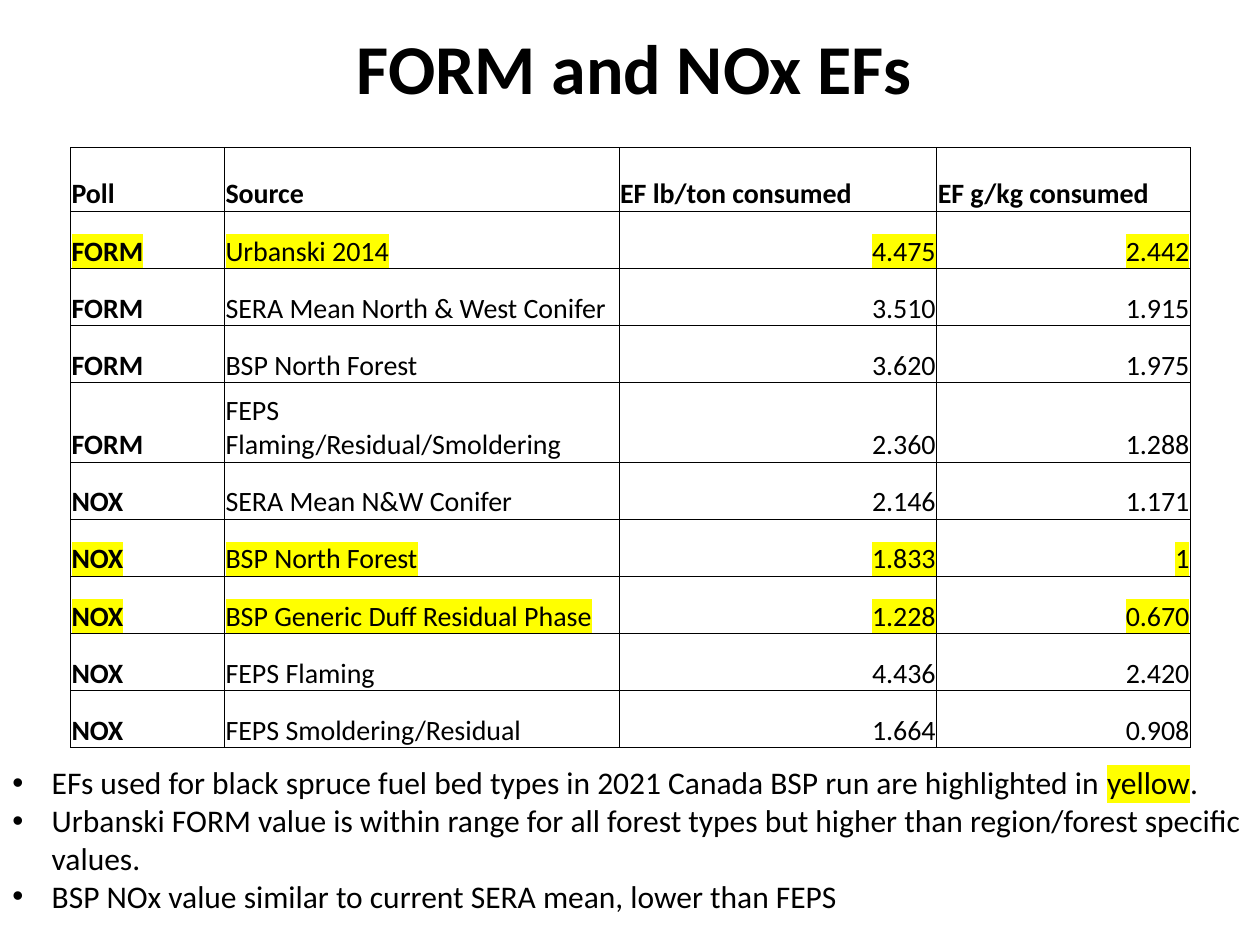
from dataclasses import dataclass

import pptx
import pptx.dml.color
import pptx.enum.text
import pptx.oxml
import pptx.oxml.ns
import pptx.util

Pt = pptx.util.Pt
Align = pptx.enum.text.PP_ALIGN
Anchor = pptx.enum.text.MSO_ANCHOR


@dataclass(frozen=True)
class Theme:
    font: str = "Calibri"
    ink: str = "000000"
    highlight: str = "FFFF00"
    title_size: float = 40
    table_size: float = 16
    note_size: float = 18
    border_width: float = 0.5


@dataclass(frozen=True)
class Factor:
    pollutant: str
    source: str
    lb_per_ton: str
    g_per_kg: str
    used: bool = False
    height: float = 32.6


@dataclass(frozen=True)
class Piece:
    text: str
    marked: bool = False


THEME = Theme()
HEADINGS = ("Poll", "Source", "EF lb/ton consumed", "EF g/kg consumed")
HEADING_HEIGHT = 36.5
COLUMN_WIDTHS = (88, 225.5, 181.5, 145)
FACTORS = (
    Factor("FORM", "Urbanski 2014", "4.475", "2.442", used=True),
    Factor("FORM", "SERA Mean North & West Conifer", "3.510", "1.915"),
    Factor("FORM", "BSP North Forest", "3.620", "1.975"),
    Factor("FORM", "FEPS Flaming/Residual/Smoldering", "2.360", "1.288", height=45.6),
    Factor("NOX", "SERA Mean N&W Conifer", "2.146", "1.171"),
    Factor("NOX", "BSP North Forest", "1.833", "1", used=True),
    Factor("NOX", "BSP Generic Duff Residual Phase", "1.228", "0.670", used=True),
    Factor("NOX", "FEPS Flaming", "4.436", "2.420"),
    Factor("NOX", "FEPS Smoldering/Residual", "1.664", "0.908"),
)
NOTES = (
    (
        Piece("EFs used for black spruce fuel bed types in 2021 Canada BSP run are highlighted in "),
        Piece("yellow", marked=True),
        Piece("."),
    ),
    (
        Piece(
            "Urbanski FORM value is within range for all forest types "
            "but higher than region/forest specific values."
        ),
    ),
    (Piece("BSP NOx value similar to current SERA mean, lower than FEPS"),),
)


def add_xml(parent, tag: str, body: str = "", **attributes: str) -> None:
    settings = " ".join(f'{key}="{value}"' for key, value in attributes.items())
    namespace = pptx.oxml.ns.nsdecls("a")
    parent.append(pptx.oxml.parse_xml(f"<a:{tag} {namespace} {settings}>{body}</a:{tag}>"))


def color_xml(color: str) -> str:
    return f'<a:srgbClr val="{color}"/>'


def set_font(paragraph, size: float, bold: bool = False) -> None:
    font = paragraph.font
    font.name = THEME.font
    font.size = Pt(size)
    font.bold = bold
    font.color.rgb = pptx.dml.color.RGBColor.from_string(THEME.ink)


def add_piece(paragraph, piece: Piece) -> None:
    run = paragraph.add_run()
    run.text = piece.text
    if piece.marked:
        add_xml(run.font._element, "highlight", color_xml(THEME.highlight))


def add_title(slide) -> None:
    title = slide.shapes.title
    title.left, title.top, title.width, title.height = Pt(196.5), Pt(-11), Pt(342), Pt(104.5)
    frame = title.text_frame
    frame.auto_size = pptx.enum.text.MSO_AUTO_SIZE.NONE
    frame.vertical_anchor = Anchor.MIDDLE
    heading = frame.paragraphs[0]
    heading.alignment = Align.LEFT
    heading.line_spacing = 0.9
    add_piece(heading, Piece("FORM and NOx EFs"))
    set_font(heading, THEME.title_size, bold=True)


def fill_cell(cell, piece: Piece, bold: bool, alignment: Align) -> None:
    cell.margin_left = cell.margin_right = cell.margin_top = Pt(0.6)
    cell.margin_bottom = Pt(0)
    cell.vertical_anchor = Anchor.BOTTOM
    properties = cell._tc.get_or_add_tcPr()
    for side in ("lnL", "lnR", "lnT", "lnB"):
        add_xml(
            properties,
            side,
            f"<a:solidFill>{color_xml(THEME.ink)}</a:solidFill>",
            w=str(int(Pt(THEME.border_width))),
        )
    cell.fill.background()
    entry = cell.text_frame.paragraphs[0]
    entry.alignment = alignment
    add_piece(entry, piece)
    set_font(entry, THEME.table_size, bold)


def add_factor_table(slide) -> None:
    heights = (HEADING_HEIGHT, *(factor.height for factor in FACTORS))
    table = slide.shapes.add_table(
        len(heights), len(HEADINGS), Pt(40.3), Pt(84.4), Pt(sum(COLUMN_WIDTHS)), Pt(sum(heights))
    ).table
    table.first_row = table.horz_banding = False
    for column, width in zip(table.columns, COLUMN_WIDTHS):
        column.width = Pt(width)
    for row, height in zip(table.rows, heights):
        row.height = Pt(height)
    for column, heading in enumerate(HEADINGS):
        fill_cell(table.cell(0, column), Piece(heading), True, Align.LEFT)
    for row, factor in enumerate(FACTORS, start=1):
        values = (factor.pollutant, factor.source, factor.lb_per_ton, factor.g_per_kg)
        for column, value in enumerate(values):
            alignment = Align.RIGHT if column >= 2 else Align.LEFT
            fill_cell(table.cell(row, column), Piece(value, factor.used), column == 0, alignment)


def add_notes(slide) -> None:
    frame = slide.shapes.add_textbox(Pt(0), Pt(432.7), Pt(720), Pt(94.5)).text_frame
    frame.word_wrap = True
    frame.auto_size = pptx.enum.text.MSO_AUTO_SIZE.SHAPE_TO_FIT_TEXT
    for index, pieces in enumerate(NOTES):
        note = frame.add_paragraph() if index else frame.paragraphs[0]
        properties = note._p.get_or_add_pPr()
        indent = int(Pt(22.5))
        properties.set("marL", str(indent))
        properties.set("indent", str(-indent))
        add_xml(properties, "buFont", typeface="Arial")
        add_xml(properties, "buChar", char="•")
        for piece in pieces:
            add_piece(note, piece)
        set_font(note, THEME.note_size)


def main() -> None:
    deck = pptx.Presentation()
    deck.slide_width, deck.slide_height = Pt(720), Pt(540)
    slide = deck.slides.add_slide(deck.slide_layouts.get_by_name("Title Only"))
    add_title(slide)
    add_factor_table(slide)
    add_notes(slide)
    deck.save("out.pptx")


if __name__ == "__main__":
    main()
